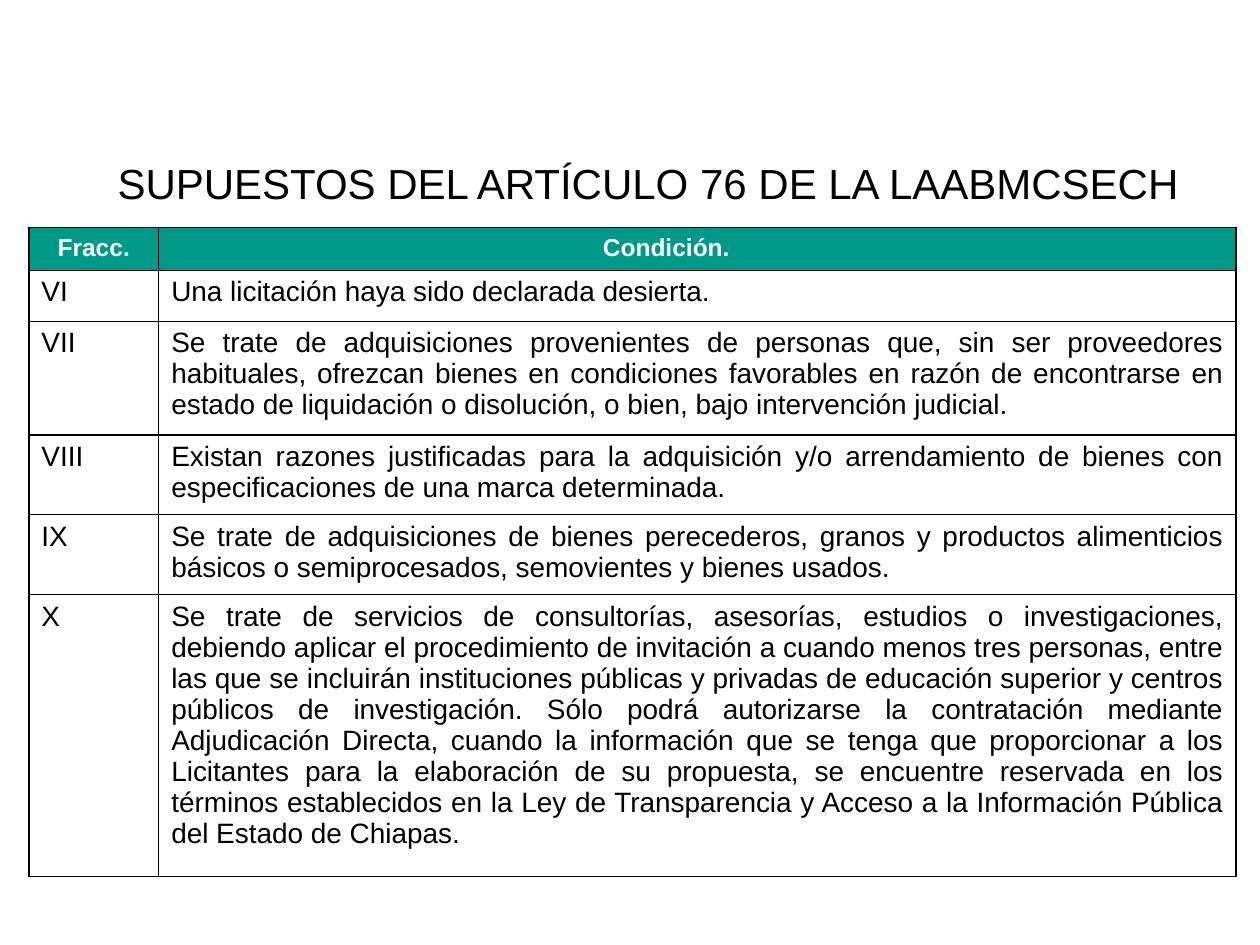
from lxml import etree
from pptx import Presentation
from pptx.dml.color import RGBColor
from pptx.enum.text import MSO_AUTO_SIZE, PP_ALIGN
from pptx.oxml.ns import qn
from pptx.util import Pt

CENTER = PP_ALIGN.CENTER
JUSTIFY = PP_ALIGN.JUSTIFY
GROW = MSO_AUTO_SIZE.SHAPE_TO_FIT_TEXT

BLACK, WHITE, GREEN = "000000", "FFFFFF", "009887"
FONT = "Arial"
COLUMN_WIDTHS = [74.2, 615.6]
ROW_HEIGHTS = [24.5, 29.1, 64.9, 45.5, 45.7, 161]
ROWS = [
    ("Fracc.", "Condición.\t"),
    ("VI", "Una licitación haya sido declarada desierta."),
    ("VII", "Se trate de adquisiciones provenientes de personas que, sin ser "
     "proveedores habituales, ofrezcan bienes en condiciones favorables en razón "
     "de encontrarse en estado de liquidación o disolución, o bien, bajo "
     "intervención judicial."),
    ("VIII", "Existan razones justificadas para la adquisición y/o arrendamiento "
     "de bienes con especificaciones de una marca determinada."),
    ("IX", "Se trate de adquisiciones de bienes perecederos, granos y productos "
     "alimenticios básicos o semiprocesados, semovientes y bienes usados."),
    ("X", "Se trate de servicios de consultorías, asesorías, estudios o "
     "investigaciones, debiendo aplicar el procedimiento de invitación a cuando "
     "menos tres personas, entre las que se incluirán instituciones públicas y "
     "privadas de educación superior y centros públicos de investigación. Sólo "
     "podrá autorizarse la contratación mediante Adjudicación Directa, cuando la "
     "información que se tenga que proporcionar a los Licitantes para la "
     "elaboración de su propuesta, se encuentre reservada en los términos "
     "establecidos en la Ley de Transparencia y Acceso a la Información Pública "
     "del Estado de Chiapas."),
]


def color(hex_value):
    return RGBColor.from_string(hex_value)


def write_text(frame, text, size=16, hex_value=BLACK, bold=False, align=JUSTIFY):
    paragraph = frame.paragraphs[0]
    paragraph.alignment = align
    run = paragraph.add_run()
    run.text = text
    run.font.name = FONT
    run.font.size = Pt(size)
    run.font.bold = bold
    run.font.color.rgb = color(hex_value)


def add_title(slide, text, left, top, width, height):
    box = slide.shapes.add_textbox(Pt(left), Pt(top), Pt(width), Pt(height))
    box.text_frame.word_wrap = True
    box.text_frame.auto_size = GROW
    write_text(box.text_frame, text, size=24, align=CENTER)


def add_borders(cell, hex_value=BLACK, width=1):
    """Draw all four cell edges; call before the fill is set."""
    properties = cell._tc.get_or_add_tcPr()
    for edge in ("a:lnL", "a:lnR", "a:lnT", "a:lnB"):
        line = etree.SubElement(properties, qn(edge), w=str(Pt(width)))
        fill = etree.SubElement(line, qn("a:solidFill"))
        etree.SubElement(fill, qn("a:srgbClr"), val=hex_value)


def fill_cell(cell, text, is_header):
    add_borders(cell)
    if is_header:
        cell.fill.solid()
        cell.fill.fore_color.rgb = color(GREEN)
        write_text(cell.text_frame, text, size=14, hex_value=WHITE, bold=True, align=CENTER)
    else:
        cell.fill.background()
        write_text(cell.text_frame, text)


def add_conditions_table(slide, left, top):
    table = slide.shapes.add_table(
        len(ROWS), len(COLUMN_WIDTHS), Pt(left), Pt(top),
        Pt(sum(COLUMN_WIDTHS)), Pt(sum(ROW_HEIGHTS))).table
    table.horz_banding = False
    for column, width in zip(table.columns, COLUMN_WIDTHS):
        column.width = Pt(width)
    for index, (row, height) in enumerate(zip(table.rows, ROW_HEIGHTS)):
        row.height = Pt(height)
        for cell, text in zip(row.cells, ROWS[index]):
            fill_cell(cell, text, is_header=index == 0)


def main():
    presentation = Presentation()
    presentation.slide_width = Pt(720)
    presentation.slide_height = Pt(540)
    slide = presentation.slides.add_slide(presentation.slide_layouts[6])
    add_title(slide, "SUPUESTOS DEL ARTÍCULO 76 DE LA LAABMCSECH", 58.3, 86.4, 624.2, 36)
    add_conditions_table(slide, 16.5, 130)
    presentation.save("out.pptx")


if __name__ == "__main__":
    main()
